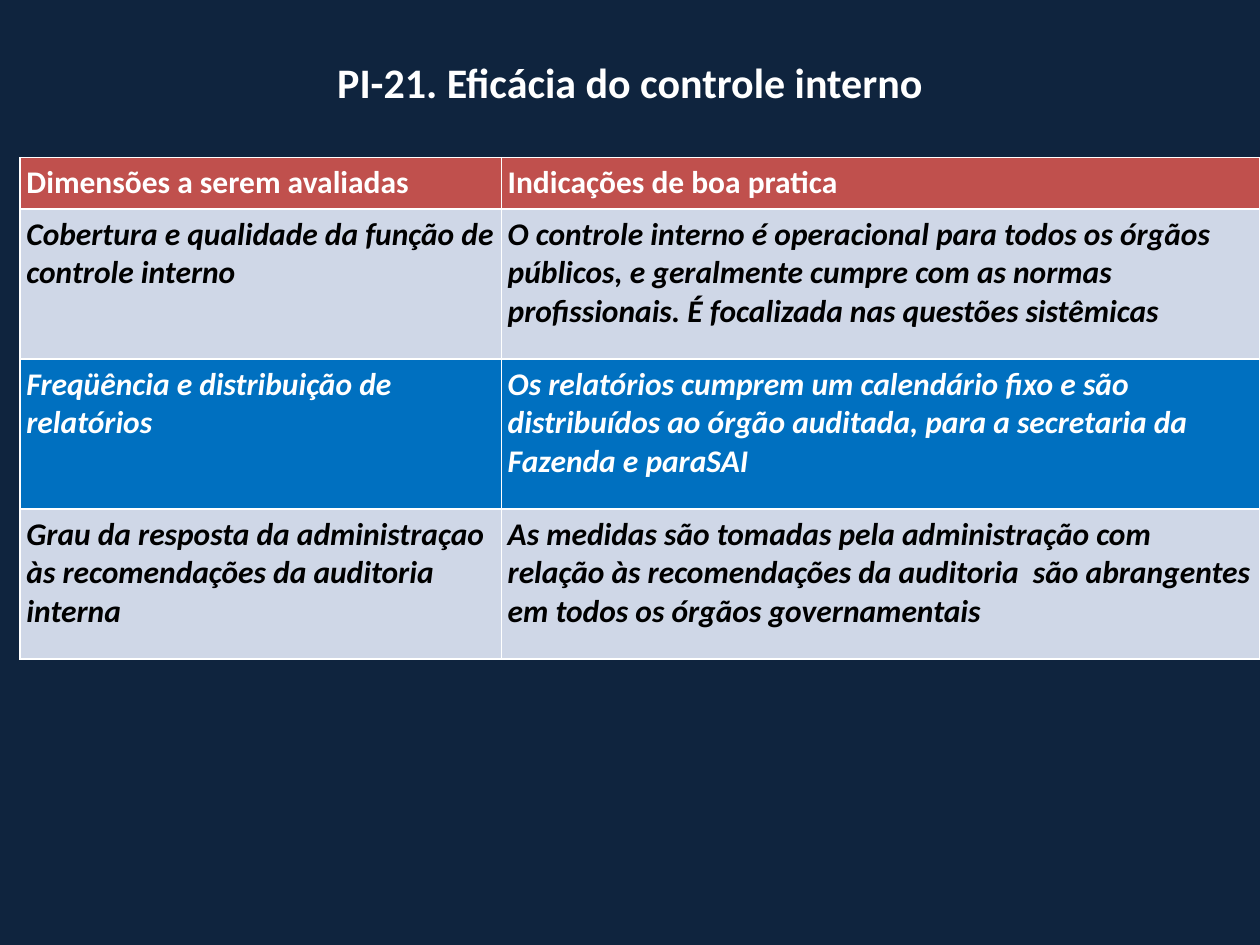
"""Build the PI-21 slide: a title above a table of dimensions and good practice."""
from lxml.etree import SubElement
from pptx import Presentation
from pptx.dml.color import RGBColor
from pptx.enum.text import MSO_ANCHOR, PP_ALIGN
from pptx.oxml.ns import qn
from pptx.util import Inches, Pt

NAVY = RGBColor(0x0F, 0x24, 0x3E)
RED = RGBColor(0xC0, 0x50, 0x4D)
PALE = RGBColor(0xCF, 0xD7, 0xE7)
BLUE = RGBColor(0x00, 0x70, 0xC0)
WHITE = RGBColor(0xFF, 0xFF, 0xFF)
BLACK = RGBColor(0x00, 0x00, 0x00)
FONT = "Calibri"
MARGIN = Inches(0.05)

TITLE = "PI-21. Eficácia do controle interno"
ROWS = [
    ("Dimensões a serem avaliadas", "Indicações de boa pratica"),
    ("Cobertura e qualidade da função de controle interno",
     "O controle interno é operacional para todos os órgãos públicos, e geralmente "
     "cumpre com as normas profissionais. É focalizada nas questões sistêmicas"),
    ("Freqüência e distribuição de relatórios",
     "Os relatórios cumprem um calendário fixo e são distribuídos ao órgão auditada, "
     "para a secretaria da Fazenda e paraSAI"),
    ("Grau da resposta da administraçao às recomendações da auditoria interna",
     "As medidas são tomadas pela administração com relação às recomendações da "
     "auditoria  são abrangentes em todos os órgãos governamentais"),
]
ROW_COLORS = [(RED, WHITE), (PALE, BLACK), (BLUE, WHITE), (PALE, BLACK)]
COLUMN_WIDTHS = [3.82, 6.02]
ROW_HEIGHTS = [0.41, 1.19, 1.19, 1.19]


def set_margins(holder):
    holder.margin_left = holder.margin_right = MARGIN
    holder.margin_top = holder.margin_bottom = MARGIN


def style_text(frame, size, color, italic=False):
    font = frame.paragraphs[0].runs[0].font
    font.name, font.size, font.bold, font.italic = FONT, Pt(size), True, italic
    font.color.rgb = color


def add_borders(cell, color, width):
    properties = cell._tc.get_or_add_tcPr()
    for side in ("a:lnL", "a:lnR", "a:lnT", "a:lnB"):
        line = SubElement(properties, qn(side), w=str(Pt(width)))
        fill = SubElement(line, qn("a:solidFill"))
        SubElement(fill, qn("a:srgbClr"), val=str(color))


def add_title(page):
    box = page.shapes.add_textbox(Inches(0.5), Inches(0.3), Inches(9), Inches(0.7))
    frame = box.text_frame
    frame.word_wrap = True
    frame.vertical_anchor = MSO_ANCHOR.MIDDLE
    set_margins(frame)
    frame.text = TITLE
    frame.paragraphs[0].alignment = PP_ALIGN.CENTER
    style_text(frame, 24, WHITE)


def add_practice_table(page):
    table = page.shapes.add_table(
        len(ROWS), len(COLUMN_WIDTHS), Inches(0.16), Inches(1.25),
        Inches(sum(COLUMN_WIDTHS)), Inches(sum(ROW_HEIGHTS))).table
    for column, width in zip(table.columns, COLUMN_WIDTHS):
        column.width = Inches(width)
    for row, height in zip(table.rows, ROW_HEIGHTS):
        row.height = Inches(height)
    for index, (texts, (fill, ink)) in enumerate(zip(ROWS, ROW_COLORS)):
        for cell, text in zip(table.rows[index].cells, texts):
            set_margins(cell)
            add_borders(cell, WHITE, 1)
            cell.fill.solid()
            cell.fill.fore_color.rgb = fill
            cell.text_frame.text = text
            style_text(cell.text_frame, 18, ink, italic=index > 0)


def main():
    deck = Presentation()
    deck.slide_width, deck.slide_height = Inches(10), Inches(7.5)
    page = deck.slides.add_slide(deck.slide_layouts[6])
    page.background.fill.solid()
    page.background.fill.fore_color.rgb = NAVY
    add_title(page)
    add_practice_table(page)
    deck.save("out.pptx")


if __name__ == "__main__":
    main()
